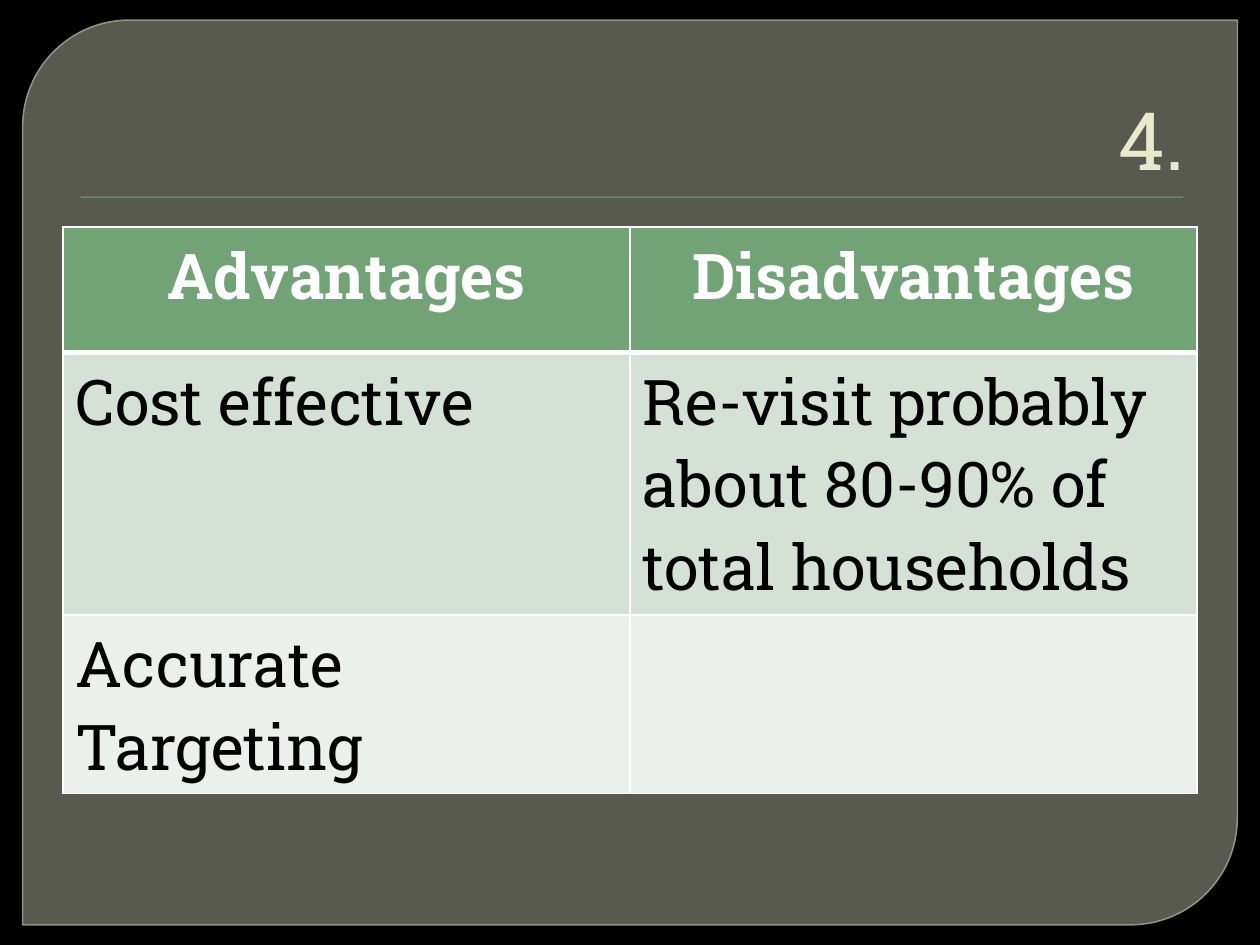
import pptx
import pptx.dml.color
import pptx.enum.shapes
import pptx.enum.text
import pptx.oxml
import pptx.oxml.ns
import pptx.util

RGBColor = pptx.dml.color.RGBColor
Inches = pptx.util.Inches
Pt = pptx.util.Pt
MSO_SHAPE = pptx.enum.shapes.MSO_SHAPE
PP_ALIGN = pptx.enum.text.PP_ALIGN
qn = pptx.oxml.ns.qn

FONT = "Roboto Slab"
BLACK = RGBColor(0x00, 0x00, 0x00)
WHITE = RGBColor(0xFF, 0xFF, 0xFF)
PANEL = RGBColor(0x88, 0x8B, 0x7B)
PANEL_EDGE = RGBColor(0x9D, 0xA0, 0x90)
GREEN = RGBColor(0x72, 0xA3, 0x76)
CREAM = RGBColor(0xE7, 0xEA, 0xCB)
ROW_FILLS = [GREEN, RGBColor(0xD5, 0xE0, 0xD6), RGBColor(0xEB, 0xF0, 0xEC)]

ROWS = [
    ("Advantages", "Disadvantages"),
    ("Cost effective", "Re-visit probably about 80-90% of total households"),
    ("Accurate Targeting", ""),
]
ROW_HEIGHTS = [1, 2.08, 1.42]


def format_text(paragraph, size, color, bold=False):
    for run in paragraph.runs:
        run.font.name = FONT
        run.font.size = Pt(size)
        run.font.color.rgb = color
        run.font.bold = bold


def set_opacity(solid_fill, percent):
    alpha = solid_fill[0].makeelement(qn("a:alpha"), {"val": str(percent * 1000)})
    solid_fill[0].append(alpha)


def add_panel(slide):
    panel = slide.shapes.add_shape(
        MSO_SHAPE.ROUND_2_DIAG_RECTANGLE,
        Inches(0.18), Inches(0.16), Inches(9.64), Inches(7.18))
    panel.adjustments[0] = 0.118
    panel.adjustments[1] = 0
    panel.shadow.inherit = False
    panel.fill.solid()
    panel.fill.fore_color.rgb = PANEL
    panel.line.color.rgb = PANEL_EDGE
    panel.line.width = Pt(0.87)
    properties = panel.element.spPr
    set_opacity(properties.find(qn("a:solidFill")), 65)
    set_opacity(properties.find(qn("a:ln")).find(qn("a:solidFill")), 88)


def add_divider(slide):
    divider = slide.shapes.add_shape(
        MSO_SHAPE.RECTANGLE,
        Inches(0.64), Inches(1.56), Inches(8.75), Inches(0.01))
    divider.shadow.inherit = False
    divider.fill.solid()
    divider.fill.fore_color.rgb = GREEN
    divider.line.fill.background()
    effects = divider.element.spPr.find(qn("a:effectLst"))
    effects.append(pptx.oxml.parse_xml(
        '<a:outerShdw xmlns:a="http://schemas.openxmlformats.org/drawingml/2006/main" '
        'blurRad="12700" dist="12700" dir="5400000" rotWithShape="0">'
        '<a:srgbClr val="000000"><a:alpha val="75000"/></a:srgbClr></a:outerShdw>'))


def add_title(slide, text):
    title = slide.shapes.add_textbox(Inches(0.5), Inches(0.28), Inches(9), Inches(1.25))
    frame = title.text_frame
    frame.word_wrap = True
    frame.vertical_anchor = pptx.enum.text.MSO_ANCHOR.BOTTOM
    frame.text = text
    paragraph = frame.paragraphs[0]
    paragraph.alignment = PP_ALIGN.RIGHT
    format_text(paragraph, 46, CREAM)


def set_borders(cell, bottom_width):
    properties = cell._tc.get_or_add_tcPr()
    widths = {"L": 1, "R": 1, "T": 1, "B": bottom_width}
    for index, (side, width) in enumerate(widths.items()):
        border = pptx.oxml.parse_xml(
            f'<a:ln{side} xmlns:a="http://schemas.openxmlformats.org/drawingml/2006/main" '
            f'w="{Pt(width)}"><a:solidFill><a:srgbClr val="{WHITE}"/></a:solidFill></a:ln{side}>')
        properties.insert(index, border)


def add_comparison(slide):
    table = slide.shapes.add_table(
        len(ROWS), 2, Inches(0.5), Inches(1.8), Inches(9), Inches(sum(ROW_HEIGHTS))).table
    for row_index, texts in enumerate(ROWS):
        table.rows[row_index].height = Inches(ROW_HEIGHTS[row_index])
        header = row_index == 0
        for column_index, text in enumerate(texts):
            cell = table.cell(row_index, column_index)
            cell.fill.solid()
            cell.fill.fore_color.rgb = ROW_FILLS[row_index]
            set_borders(cell, 3 if header else 1)
            cell.text_frame.text = text
            paragraph = cell.text_frame.paragraphs[0]
            paragraph.alignment = PP_ALIGN.CENTER if header else PP_ALIGN.LEFT
            format_text(paragraph, 36, WHITE if header else BLACK, header)


def main():
    presentation = pptx.Presentation()
    presentation.slide_width = Inches(10)
    presentation.slide_height = Inches(7.5)
    slide = presentation.slides.add_slide(presentation.slide_layouts[6])
    slide.background.fill.solid()
    slide.background.fill.fore_color.rgb = BLACK
    add_panel(slide)
    add_divider(slide)
    add_title(slide, "4.")
    add_comparison(slide)
    presentation.save("out.pptx")


if __name__ == "__main__":
    main()
